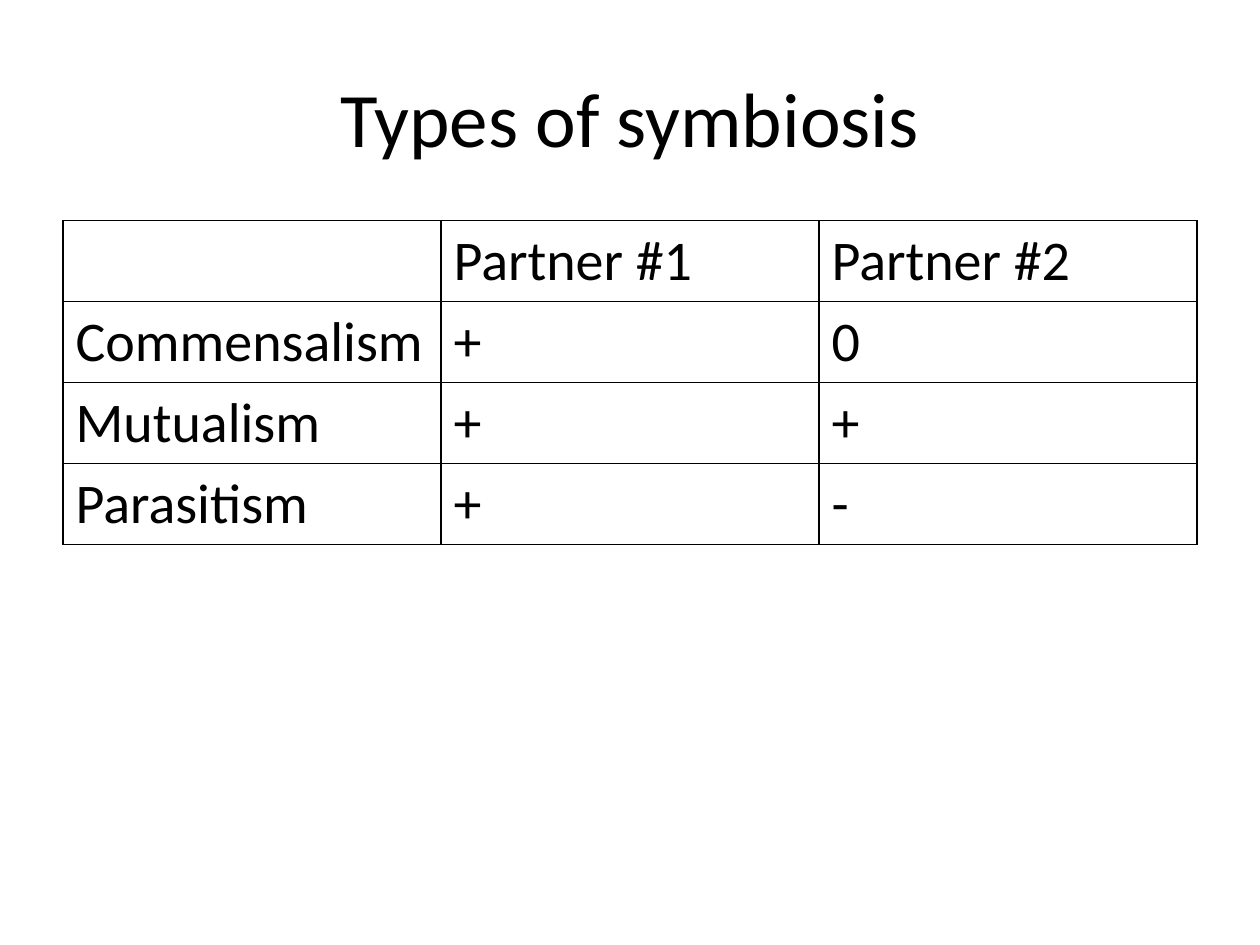
from pptx import Presentation
from pptx.dml.color import RGBColor
from pptx.enum import text
from pptx.oxml import parse_xml
from pptx.oxml.ns import nsdecls
from pptx.util import Pt

# Content
TITLE = "Types of symbiosis"
ROWS = [
    ("", "Partner #1", "Partner #2"),
    ("Commensalism", "+", "0"),
    ("Mutualism", "+", "+"),
    ("Parasitism", "+", "-"),
]

# Style, lengths in points
COLOURS = {"ink": "000000", "paper": "FFFFFF"}
FONT = "Calibri"
MARGIN, WIDTH = 36, 648
TITLE_TOP, TITLE_HEIGHT = 21.6, 90
TABLE_TOP, ROW_HEIGHT = 126, 46.3
BORDER = 1


def write(frame, words, size, align=text.PP_ALIGN.LEFT):
    para = frame.paragraphs[0]
    para.alignment = align
    para.font.size = Pt(size)
    if words:
        span = para.add_run()
        span.text = words
        span.font.name = FONT
        span.font.size = Pt(size)
        span.font.bold = False
        span.font.color.rgb = RGBColor.from_string(COLOURS["ink"])


def add_borders(cell):
    properties = cell._tc.get_or_add_tcPr()
    for position, side in enumerate(("lnL", "lnR", "lnT", "lnB")):
        line = parse_xml(
            f'<a:{side} {nsdecls("a")} w="{Pt(BORDER)}"><a:solidFill>'
            f'<a:srgbClr val="{COLOURS["ink"]}"/></a:solidFill></a:{side}>'
        )
        properties.insert(position, line)


deck = Presentation()
deck.slide_width, deck.slide_height = Pt(720), Pt(540)
page = deck.slides.add_slide(deck.slide_layouts[6])
page.background.fill.solid()
page.background.fill.fore_color.rgb = RGBColor.from_string(COLOURS["paper"])

# Title
box = page.shapes.add_textbox(Pt(MARGIN), Pt(TITLE_TOP), Pt(WIDTH), Pt(TITLE_HEIGHT))
box.text_frame.word_wrap = True
box.text_frame.vertical_anchor = text.MSO_ANCHOR.MIDDLE
write(box.text_frame, TITLE, size=44, align=text.PP_ALIGN.CENTER)

# Table of partner effects
table = page.shapes.add_table(
    len(ROWS), len(ROWS[0]), Pt(MARGIN), Pt(TABLE_TOP),
    Pt(WIDTH), Pt(ROW_HEIGHT * len(ROWS)),
).table
table.first_row = table.horz_banding = False
for row, values in enumerate(ROWS):
    for column, value in enumerate(values):
        cell = table.cell(row, column)
        cell.fill.background()
        add_borders(cell)
        write(cell.text_frame, value, size=32)

deck.save("out.pptx")
